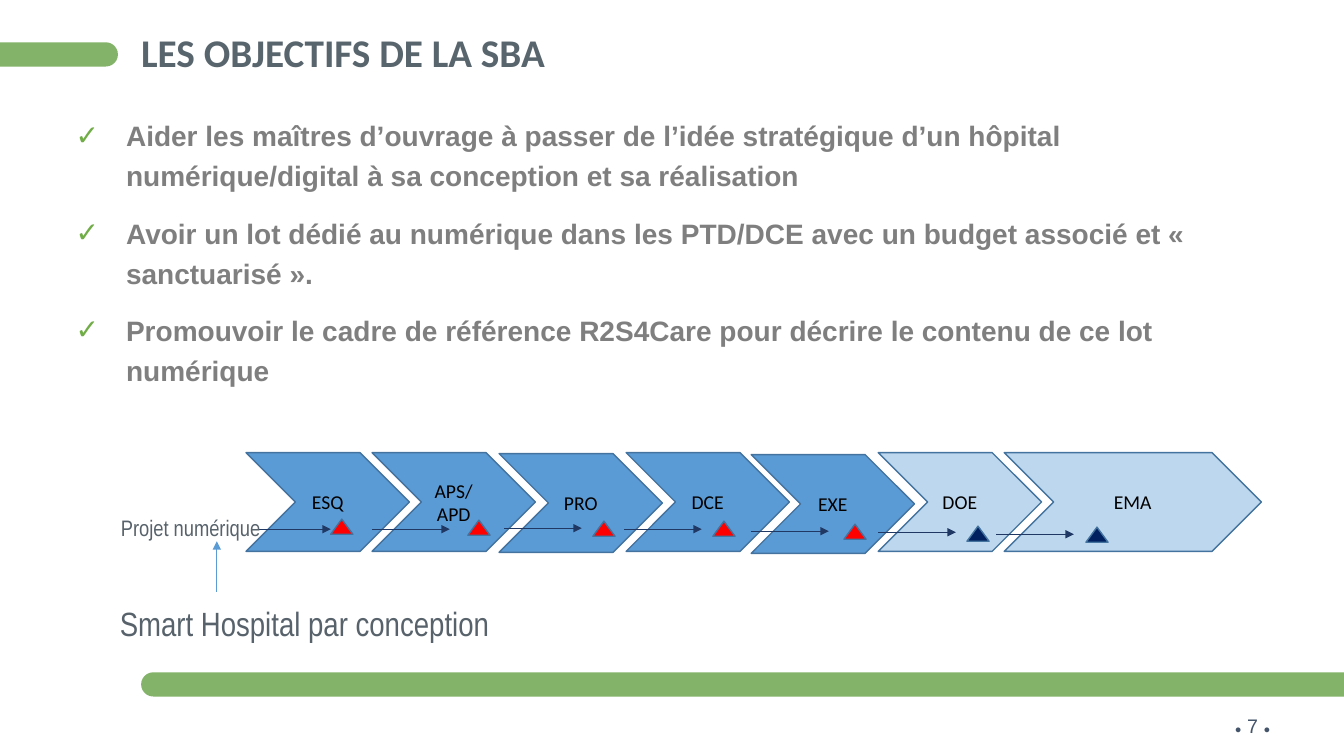
from lxml import etree
from pptx import Presentation
from pptx import util as u
from pptx.dml import color
from pptx.enum import shapes, text
from pptx.oxml import ns

RGB = color.RGBColor
GREEN = RGB(0x63, 0xA1, 0x43)
SLATE = RGB(0x59, 0x65, 0x6D)
LABEL = RGB(0x57, 0x62, 0x6B)
NUMBER = RGB(0x44, 0x54, 0x6A)
GREY = RGB(0x7F, 0x7F, 0x7F)
BLACK = RGB(0, 0, 0)
BLUE = RGB(0x5B, 0x9B, 0xD5)
PALE = RGB(0xBD, 0xD7, 0xEE)
EDGE = RGB(0x43, 0x73, 0x9E)
RED = RGB(0xFF, 0, 0)
NAVY = RGB(0, 0x20, 0x60)
ARROW = RGB(0x20, 0x38, 0x64)
LEFT, CENTER = text.PP_ALIGN.LEFT, text.PP_ALIGN.CENTER
SHAPE = shapes.MSO_SHAPE


def write(p, words, size, rgb, font="Arial", bold=False, align=LEFT, spacing=1.0):
    p.text = words
    p.alignment = align
    p.line_spacing = spacing
    for r in p.runs:
        r.font.size = u.Pt(size)
        r.font.name = font
        r.font.bold = bold
        r.font.color.rgb = rgb


def add_shape(kind, x, y, w, h, fill, edge=None):
    sp = s.shapes.add_shape(kind, u.Inches(x), u.Inches(y), u.Inches(w), u.Inches(h))
    sp.shadow.inherit = False
    sp.fill.solid()
    sp.fill.fore_color.rgb = fill
    if edge is None:
        sp.line.fill.background()
    else:
        sp.line.color.rgb = edge
        sp.line.width = u.Pt(1)
    return sp


prs = Presentation()
prs.slide_width, prs.slide_height = u.Inches(13.33), u.Inches(7.5)
s = prs.slides.add_slide(prs.slide_layouts[1])

title = s.shapes.title
title.left, title.top = u.Inches(1.4), u.Inches(0.33)
title.width, title.height = u.Inches(11.12), u.Inches(0.42)
tf = title.text_frame
tf.auto_size = text.MSO_AUTO_SIZE.NONE
tf.vertical_anchor = text.MSO_ANCHOR.MIDDLE
tf.margin_left = tf.margin_top = tf.margin_right = tf.margin_bottom = 0
write(tf.paragraphs[0], "LES OBJECTIFS DE LA SBA", 28, SLATE, "Calibri", True, spacing=0.9)

body = s.placeholders[1]
body.left, body.top = u.Inches(0.65), u.Inches(1.06)
body.width, body.height = u.Inches(11.85), u.Inches(3.07)
tf = body.text_frame
tf.auto_size = text.MSO_AUTO_SIZE.NONE
goals = [
    "Aider les maîtres d’ouvrage à passer de l’idée stratégique d’un hôpital numérique/digital à sa conception et sa réalisation",
    "Avoir un lot dédié au numérique dans les PTD/DCE avec un budget associé et « sanctuarisé ».",
    "Promouvoir le cadre de référence R2S4Care pour décrire le contenu de ce lot numérique",
]
for i, goal in enumerate(goals):
    p = tf.add_paragraph() if i else tf.paragraphs[0]
    write(p, goal, 20, GREY, bold=True, spacing=1.2)
    p.space_before = u.Pt(12 if i else 0)
    pPr = p._p.get_or_add_pPr()
    pPr.set("marL", str(u.Inches(0.5)))
    pPr.set("indent", str(-u.Inches(0.5)))
    tint = etree.SubElement(pPr, ns.qn("a:buClr"))
    etree.SubElement(tint, ns.qn("a:srgbClr"), val="70AD47")
    etree.SubElement(pPr, ns.qn("a:buFont"), typeface="Arial")
    etree.SubElement(pPr, ns.qn("a:buChar"), char="✓")

for x, y, w in [(1.4, 6.67, 12.13), (-0.13, 0.42, 1.3)]:
    bar = add_shape(SHAPE.ROUNDED_RECTANGLE, x, y, w, 0.24, GREEN)
    bar.adjustments[0] = 0.5
    tint = bar._element.spPr.find(".//" + ns.qn("a:srgbClr"))
    etree.SubElement(tint, ns.qn("a:alpha"), val="80000")

phases = [
    ("ESQ", 2.44, 4.49, 1.62, BLUE),
    ("APS/\vAPD", 3.69, 4.49, 1.62, BLUE),
    ("PRO", 4.95, 4.5, 1.62, BLUE),
    ("DCE", 6.21, 4.49, 1.62, BLUE),
    ("EXE", 7.45, 4.51, 1.62, BLUE),
    ("DOE", 8.71, 4.49, 1.62, PALE),
    ("EMA", 9.96, 4.49, 2.55, PALE),
]
for name, x, y, w, fill in phases:
    sp = add_shape(SHAPE.CHEVRON, x, y, w, 0.98, fill, EDGE)
    tf = sp.text_frame
    tf.vertical_anchor = text.MSO_ANCHOR.MIDDLE
    write(tf.paragraphs[0], name, 14, BLACK, "Calibri", align=CENTER)

milestones = [
    (3.28, 5.15, RED), (4.64, 5.16, RED), (5.88, 5.17, RED), (7.07, 5.17, RED),
    (8.37, 5.2, RED), (9.59, 5.22, NAVY), (10.77, 5.23, NAVY),
]
for x, y, fill in milestones:
    add_shape(SHAPE.ISOSCELES_TRIANGLE, x, y, 0.22, 0.15, fill, EDGE)

steps = [
    (2.51, 5.25), (3.69, 5.25), (5, 5.24), (6.19, 5.25),
    (7.45, 5.27), (8.71, 5.28), (9.88, 5.3),
]
arrows = [(x, y, x + 0.77, y, ARROW) for x, y in steps]
arrows.append((2.15, 5.87, 2.15, 5.37, BLUE))
for x1, y1, x2, y2, rgb in arrows:
    line = s.shapes.add_connector(
        shapes.MSO_CONNECTOR.STRAIGHT,
        u.Inches(x1), u.Inches(y1), u.Inches(x2), u.Inches(y2))
    line.line.color.rgb = rgb
    line.line.width = u.Pt(0.5)
    etree.SubElement(line.line._get_or_add_ln(), ns.qn("a:tailEnd"), type="triangle")
    etree.SubElement(line._element.spPr, ns.qn("a:effectLst"))

labels = [
    ("Projet numérique", 1.1, 5, 2.41, 0.39, 16, LABEL, "Arial Narrow", 1.2),
    ("Smart Hospital par conception", 1.09, 5.85, 5.87, 0.54, 24, LABEL, "Arial Narrow", 1.2),
    ("●", 12.15, 7.03, 1.17, 0.34, 8, NUMBER, "Arial", 1.0),
]
for words, x, y, w, h, size, rgb, font, spacing in labels:
    sp = s.shapes.add_textbox(u.Inches(x), u.Inches(y), u.Inches(w), u.Inches(h))
    tf = sp.text_frame
    tf.word_wrap = True
    p = tf.paragraphs[0]
    write(p, words, size, rgb, font, spacing=spacing)

for words, size in [(" 7 ", 14), ("●", 8)]:
    r = p.add_run()
    r.text = words
    r.font.size = u.Pt(size)
    r.font.name = "Arial"
    r.font.color.rgb = NUMBER

prs.save("out.pptx")
